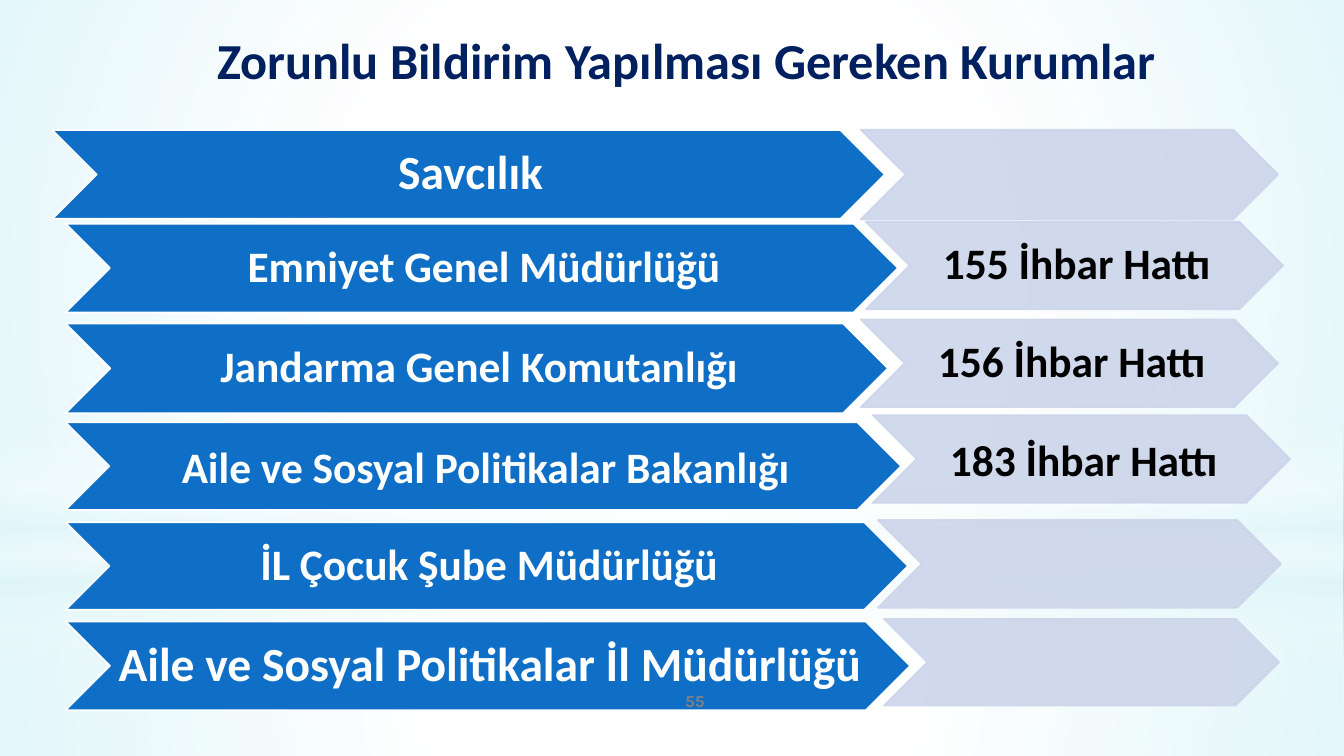
from pptx import Presentation
from pptx.dml.color import RGBColor
from pptx.enum.shapes import MSO_SHAPE as Shape
from pptx.enum.text import MSO_ANCHOR as Anchor, PP_ALIGN as Align
from pptx.oxml import parse_xml
from pptx.oxml.ns import nsdecls, qn
from pptx.util import Pt

SLIDE_WIDTH, SLIDE_HEIGHT = 960, 540
BLUE, PALE, WHITE, ICE = "0F6FC6", "CCD5EA", "FFFFFF", "DBF5F9"
RADIAL = ('<a:path path="circle">'
          '<a:fillToRect l="50000" t="50000" r="50000" b="50000"/></a:path>')
LINEAR = '<a:lin ang="5400000" scaled="0"/>'

# Gradient layers: shape, box, direction, stops (position, colour, opacity)
BACKDROP = [
    (Shape.RECTANGLE, (0, 401.8, 960, 138.2), RADIAL,
     [(0, WHITE, 91), (37, WHITE, 76), (100, ICE, 79)]),
    (Shape.RECTANGLE, (0, 0, 960, 401.8), RADIAL,
     [(0, WHITE, 89), (48, WHITE, 62), (100, ICE, 79)]),
    (Shape.RECTANGLE, (0, 296.6, 960, 180), LINEAR,
     [(0, WHITE, 0), (29, WHITE, 30), (45, ICE, 40),
      (55, WHITE, 26), (65, ICE, 60), (100, WHITE, 0)]),
    (Shape.OVAL, (0, 126, 960, 401.8), RADIAL,
     [(0, WHITE, 100), (56, WHITE, 0)]),
]

# Institution: name, size, line spacing, box; hotline: text, box
ROWS = [
    ("Savcılık", 34, 0.9, (37.4, 92.9, 594.7, 63.4),
     "", (614.9, 92.6, 298.1, 64.1)),
    ("Emniyet Genel Müdürlüğü", 31, 0.9, (46.8, 159.8, 594.7, 63.4),
     "155 İhbar Hattı", (618.5, 158.4, 298.1, 62.6)),
    ("Jandarma Genel Komutanlığı", 31, 0.9, (46.8, 231.1, 587.5, 64.1),
     "156 İhbar Hattı", (614.9, 228.2, 298.1, 62.6)),
    ("Aile ve Sosyal Politikalar Bakanlığı", 31, 1.0, (46.8, 301.7, 596.9, 62.6),
     "183 İhbar Hattı", (623.5, 296.6, 298.1, 62.6)),
    ("İL Çocuk Şube Müdürlüğü", 31, 0.9, (46.8, 373, 601.9, 62.6),
     "", (627.1, 371.5, 288, 62.6)),
    ("Aile ve Sosyal Politikalar İl Müdürlüğü", 34, 0.9, (46.8, 443.9, 603.4, 63.4),
     "", (631.4, 442.1, 282.2, 61.9)),
]


def color(value):
    return RGBColor.from_string(value)


def points(box):
    return [Pt(length) for length in box]


def add_gradient(slide, kind, box, direction, stops):
    shape = slide.shapes.add_shape(kind, *points(box))
    shape.shadow.inherit = False
    shape.line.fill.background()
    shape.fill.background()
    stop_xml = "".join(
        f'<a:gs pos="{position * 1000}"><a:srgbClr val="{value}">'
        f'<a:alpha val="{opacity * 1000}"/></a:srgbClr></a:gs>'
        for position, value, opacity in stops)
    gradient = parse_xml(
        f'<a:gradFill {nsdecls("a")} rotWithShape="1">'
        f'<a:gsLst>{stop_xml}</a:gsLst>{direction}</a:gradFill>')
    properties = shape._element.spPr
    properties.replace(properties.find(qn("a:noFill")), gradient)


def write(shape, text, size, value, font="Calibri", spacing=1.0, **frame_format):
    frame = shape.text_frame
    for name, setting in frame_format.items():
        setattr(frame, name, setting)
    paragraph = frame.paragraphs[0]
    paragraph.text = text
    paragraph.alignment = Align.CENTER
    paragraph.line_spacing = spacing
    font_format = {"name": font, "size": Pt(size), "bold": True}
    for name, setting in font_format.items():
        setattr(paragraph.runs[0].font, name, setting)
    paragraph.runs[0].font.color.rgb = color(value)


def add_chevron(slide, box, fill, line, opacity=100):
    shape = slide.shapes.add_shape(Shape.CHEVRON, *points(box))
    shape.shadow.inherit = False
    shape.fill.solid()
    shape.fill.fore_color.rgb = color(fill)
    shape.line.color.rgb = color(line)
    shape.line.width = Pt(1.25)
    if opacity < 100:
        for element in shape._element.spPr.iter(qn("a:srgbClr")):
            element.append(parse_xml(
                f'<a:alpha {nsdecls("a")} val="{opacity * 1000}"/>'))
    return shape


def add_label(slide, box, text, size, value, **text_format):
    write(slide.shapes.add_textbox(*points(box)), text, size, value,
          word_wrap=True, **text_format)


def main():
    presentation = Presentation()
    presentation.slide_width = Pt(SLIDE_WIDTH)
    presentation.slide_height = Pt(SLIDE_HEIGHT)
    slide = presentation.slides.add_slide(presentation.slide_layouts[6])

    # Background
    for layer in BACKDROP:
        add_gradient(slide, *layer)

    # Institutions and their hotlines
    chevron_text = {"word_wrap": False, "vertical_anchor": Anchor.MIDDLE,
                    "margin_left": Pt(3), "margin_right": 0,
                    "margin_top": Pt(1.5), "margin_bottom": Pt(1.5)}
    for name, size, spacing, box, hotline, hotline_box in ROWS:
        institution = add_chevron(slide, box, BLUE, WHITE)
        write(institution, name, size, WHITE, spacing=spacing, **chevron_text)
        hotline_shape = add_chevron(slide, hotline_box, PALE, PALE, opacity=90)
        if hotline:
            write(hotline_shape, hotline, size, "000000", spacing=spacing,
                  **chevron_text)

    # Title and slide number
    add_label(slide, (59, 17.3, 863.3, 51.1),
              "Zorunlu Bildirim Yapılması Gereken Kurumlar", 36, "002060")
    add_label(slide, (400.3, 486, 192.2, 28.8), "55", 12, "808080",
              font="Karla", vertical_anchor=Anchor.MIDDLE)

    presentation.save("out.pptx")


if __name__ == "__main__":
    main()
